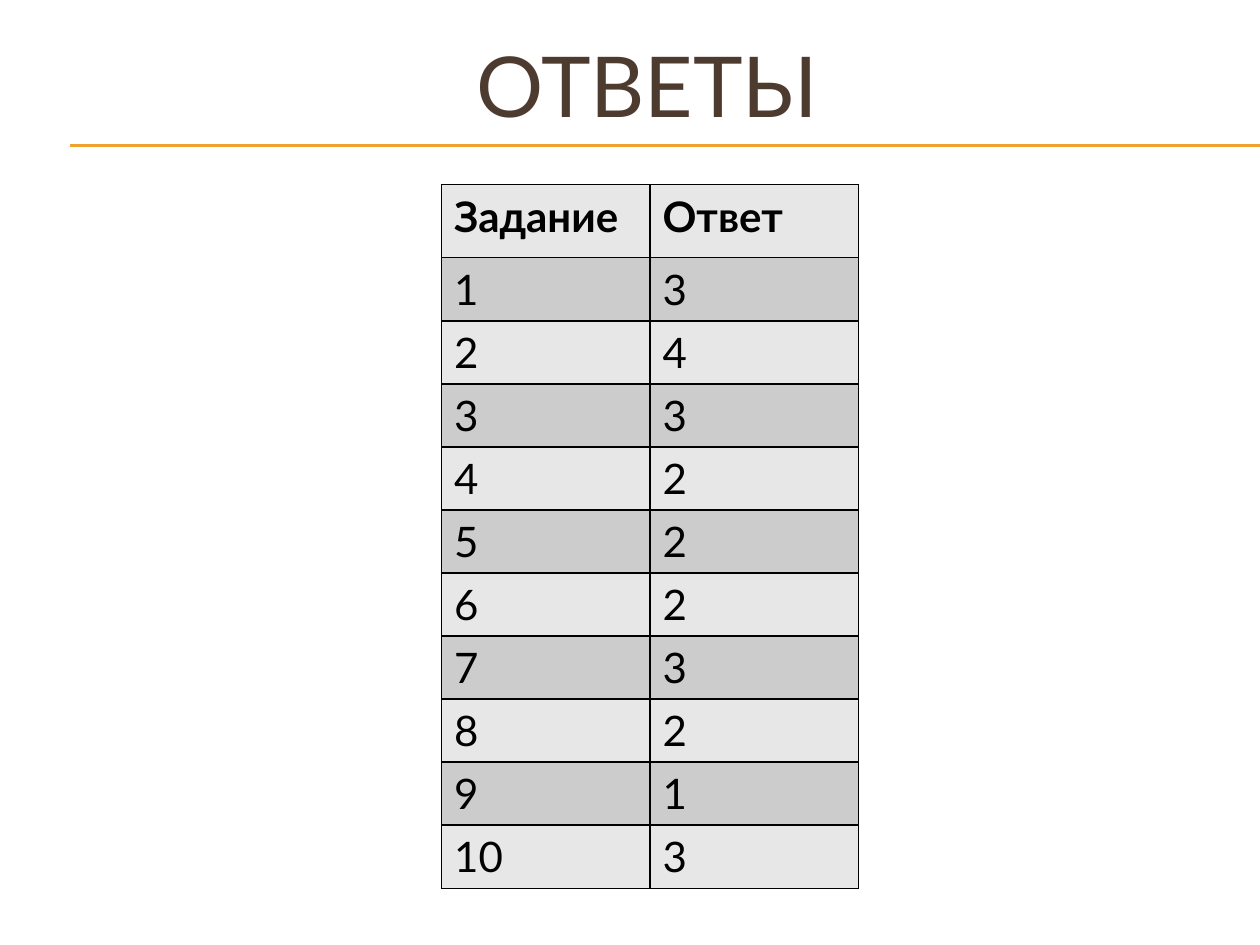
"""Builds the slide with the table of answers."""
from lxml.etree import SubElement
from pptx import Presentation
from pptx.dml.color import RGBColor
from pptx.enum.shapes import MSO_CONNECTOR
from pptx.enum.text import MSO_ANCHOR, PP_ALIGN
from pptx.oxml.ns import qn
from pptx.util import Pt

TITLE = "ОТВЕТЫ"
HEADER = ("Задание", "Ответ")
ANSWERS = (3, 4, 3, 2, 2, 2, 3, 2, 1, 3)
FONT = "Lato"
COLORS = {"title": "4E3B30", "rule": "F0A22E", "text": "000000",
          "border": "000000", "light": "E7E7E7", "dark": "CCCCCC"}
RULE_TOPS = (82.8, 83.5)
COL_W, HEADER_H, ROW_H = 119.1, 41.8, 36


def write(tf, text, size=24, color="text", bold=False, align=PP_ALIGN.LEFT):
    p = tf.paragraphs[0]
    p.alignment = align
    r = p.add_run()
    r.text = text
    r.font.name, r.font.size, r.font.bold = FONT, Pt(size), bold
    r.font.color.rgb = RGBColor.from_string(COLORS[color])


def add_rule(s, top):
    line = s.shapes.add_connector(
        MSO_CONNECTOR.STRAIGHT, Pt(40.3), Pt(top), Pt(720), Pt(top))
    line.line.color.rgb = RGBColor.from_string(COLORS["rule"])
    line.line.width = Pt(0.75)
    SubElement(line._element.spPr, qn("a:effectLst"))


def style_cell(cell, fill):
    tc_pr = cell._tc.get_or_add_tcPr()
    for side in ("lnL", "lnR", "lnT", "lnB"):
        ln = SubElement(tc_pr, qn(f"a:{side}"), w=str(Pt(1)))
        solid = SubElement(ln, qn("a:solidFill"))
        SubElement(solid, qn("a:srgbClr"), val=COLORS["border"])
    cell.fill.solid()
    cell.fill.fore_color.rgb = RGBColor.from_string(COLORS[fill])


def add_answers(s):
    rows = [HEADER] + [(str(n), str(a)) for n, a in enumerate(ANSWERS, 1)]
    table = s.shapes.add_table(
        len(rows), len(HEADER), Pt(252.3), Pt(105.5), Pt(COL_W * len(HEADER)),
        Pt(HEADER_H + ROW_H * len(ANSWERS))).table
    for col in table.columns:
        col.width = Pt(COL_W)
    for i, row in enumerate(rows):
        table.rows[i].height = Pt(ROW_H if i else HEADER_H)
        for j, text in enumerate(row):
            cell = table.cell(i, j)
            style_cell(cell, "dark" if i % 2 else "light")
            write(cell.text_frame, text, bold=i == 0)


def main():
    prs = Presentation()
    prs.slide_width, prs.slide_height = Pt(720), Pt(540)
    s = prs.slides.add_slide(prs.slide_layouts[6])
    for top in RULE_TOPS:
        add_rule(s, top)
    tf = s.shapes.add_textbox(Pt(42.5), Pt(15.1), Pt(655.2), Pt(66.2)).text_frame
    tf.word_wrap = True
    tf.vertical_anchor = MSO_ANCHOR.MIDDLE
    write(tf, TITLE, size=48, color="title", align=PP_ALIGN.CENTER)
    add_answers(s)
    prs.save("out.pptx")


if __name__ == "__main__":
    main()
